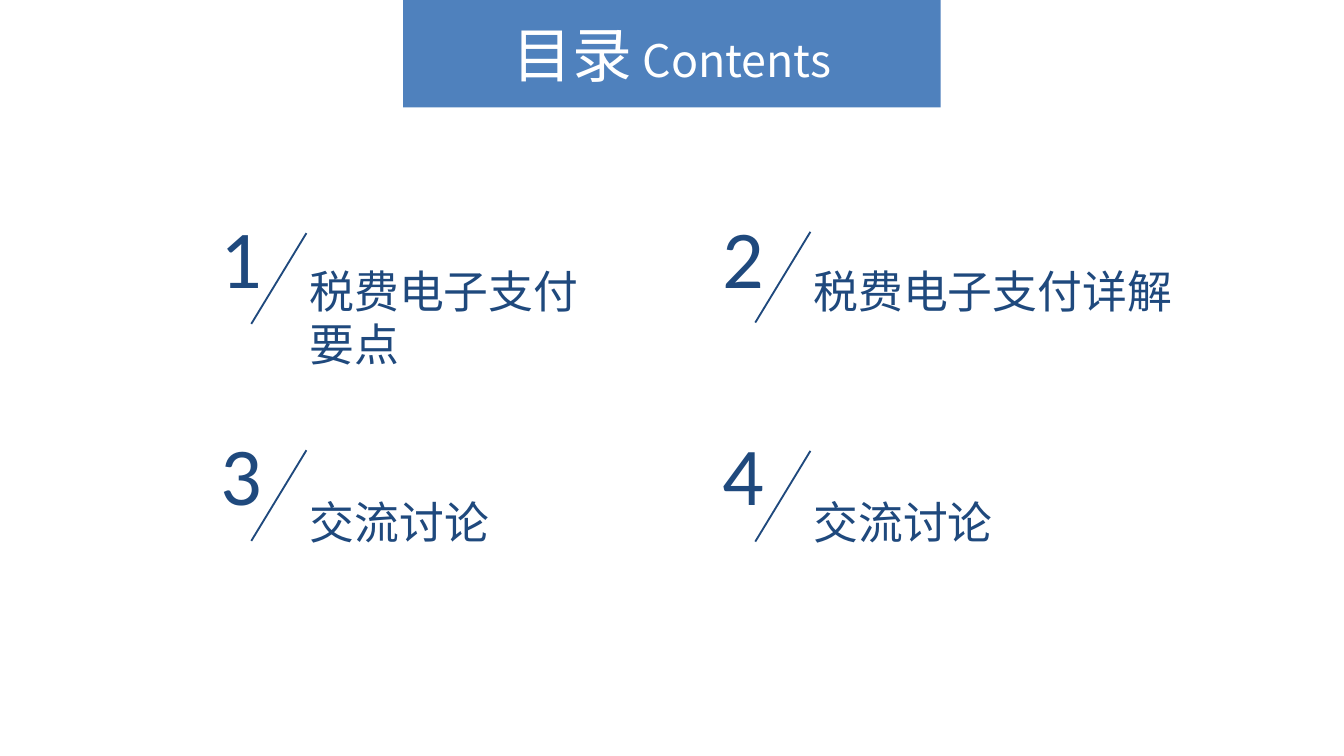
from typing import Any, NamedTuple

from pptx import Presentation
from pptx.dml.color import RGBColor
from pptx.enum.shapes import MSO_CONNECTOR, MSO_SHAPE
from pptx.enum.text import MSO_ANCHOR as Anchor, PP_ALIGN as Align
from pptx.oxml.ns import qn
from pptx.util import Emu, Pt
from lxml.etree import SubElement

PX = 4572  # 200 px to the inch
COLORS = {"banner": "4F81BD", "heading": "FFFFFF", "navy": "1F497D"}
CJK, LATIN = "Noto Sans CJK SC", "Calibri"


class Column(NamedTuple):
    number_left: int
    label_left: int


class Row(NamedTuple):
    number_top: int
    label_top: int


class Entry(NamedTuple):
    label: str
    slash_top: int
    label_width: int
    label_height: int = 100


COLUMNS = [Column(309, 441), Column(1056, 1191)]
ROWS = [Row(298, 382), Row(620, 726)]
ENTRIES = [
    Entry("税费电子支付要点", 347, 500, 182),
    Entry("税费电子支付详解", 345, 592),
    Entry("交流讨论", 670, 610),
    Entry("交流讨论", 671, 500),
]


def px(*lengths: int) -> list[Emu]:
    return [Emu(length * PX) for length in lengths]


def set_format(target: Any, values: dict[str, Any]) -> None:
    for attribute, value in values.items():
        setattr(target, attribute, value)


def add_run(paragraph: Any, wording: str, size: int, font: str, color: str) -> None:
    """Append a run, with the font named for Latin and East Asian text."""
    run = paragraph.add_run()
    run.text = wording
    set_format(run.font, {"size": Pt(size), "name": font})
    run.font.color.rgb = RGBColor.from_string(COLORS[color])
    SubElement(run.font._element, qn("a:ea"), typeface=font)


def add_text(slide: Any, box: tuple[int, int, int, int], wording: str,
             size: int, font: str) -> None:
    frame = slide.shapes.add_textbox(*px(*box)).text_frame
    set_format(frame, {"word_wrap": True, "vertical_anchor": Anchor.TOP})
    add_run(frame.paragraphs[0], wording, size, font, "navy")


def add_slash(slide: Any, right: int, top: int) -> None:
    slash = slide.shapes.add_connector(
        MSO_CONNECTOR.STRAIGHT, *px(right, top, right - 82, top + 135))
    slash.line.color.rgb = RGBColor.from_string(COLORS["navy"])
    slash.line.width = Pt(1)
    SubElement(slash._element.spPr, qn("a:effectLst"))


def add_banner(slide: Any) -> None:
    banner = slide.shapes.add_shape(MSO_SHAPE.RECTANGLE, *px(600, 0, 800, 160))
    banner.shadow.inherit = False
    banner.fill.solid()
    banner.fill.fore_color.rgb = RGBColor.from_string(COLORS["banner"])
    banner.line.fill.background()
    banner.text_frame.vertical_anchor = Anchor.MIDDLE
    heading = banner.text_frame.paragraphs[0]
    heading.alignment = Align.CENTER
    for wording, size in (("目录", 32), (" Contents", 24)):
        add_run(heading, wording, size, CJK, "heading")


def add_entry(slide: Any, index: int, entry: Entry) -> None:
    row, column = ROWS[index // 2], COLUMNS[index % 2]
    add_text(slide, (column.number_left, row.number_top, 84, 168),
             str(index + 1), 44, LATIN)
    add_slash(slide, column.label_left + 15, entry.slash_top)
    add_text(slide, (column.label_left, row.label_top,
                     entry.label_width, entry.label_height),
             entry.label, 24, CJK)


def main() -> None:
    deck = Presentation()
    width, height = px(2000, 1125)
    set_format(deck, {"slide_width": width, "slide_height": height})
    contents = deck.slides.add_slide(deck.slide_layouts[6])
    add_banner(contents)
    for index, entry in enumerate(ENTRIES):
        add_entry(contents, index, entry)
    deck.save("out.pptx")


if __name__ == "__main__":
    main()
